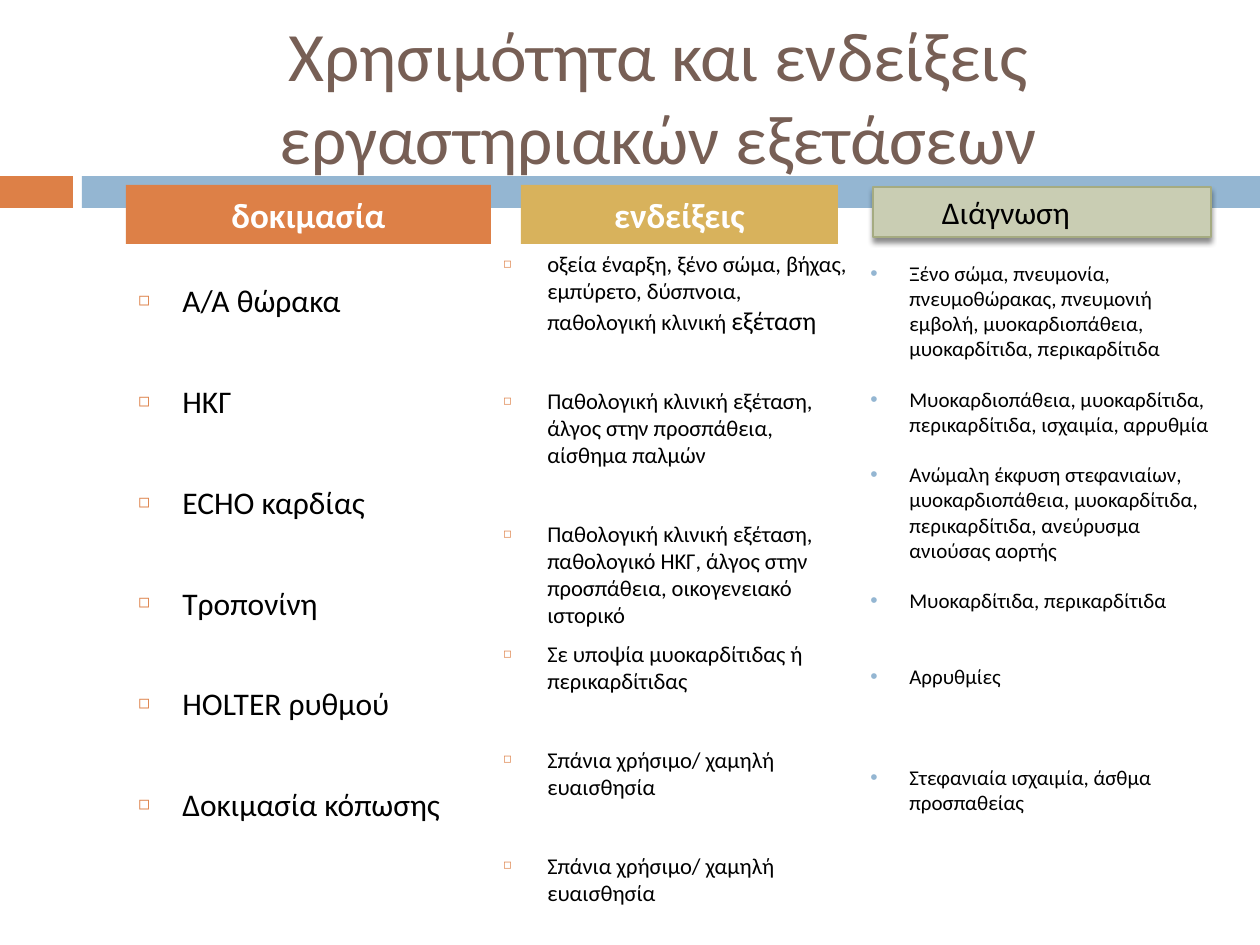
import copy

import lxml.etree
import pptx
import pptx.dml.color
import pptx.enum.shapes
import pptx.enum.text
import pptx.oxml
import pptx.oxml.ns
import pptx.util

EMU_PER_PX = 914400 / 126
ORANGE = "DD8047"
BLUE = "94B6D2"
GOLD = "D8B25C"
SAGE = "C9CDB3"
OLIVE = "A5AB81"
BROWN = "775F55"
BLACK = "000000"
WHITE = "FFFFFF"

TESTS = [
    (0, "Α/Α θώρακα"),
    (36, "HKΓ"),
    (36, "ECHO καρδίας"),
    (36, "Τροπονίνη"),
    (36, "HOLTER ρυθμού"),
    (36, "Δοκιμασία κόπωσης"),
]
INDICATIONS = [
    (0, "οξεία έναρξη, ξένο σώμα, βήχας, εμπύρετο, δύσπνοια,\vπαθολογική κλινική "),
    (29.5, "Παθολογική κλινική εξέταση, άλγος στην προσπάθεια, αίσθημα παλμών"),
    (29.5, "Παθολογική κλινική εξέταση, παθολογικό ΗΚΓ, άλγος στην προσπάθεια, οικογενειακό ιστορικό"),
    (6.7, "Σε υποψία μυοκαρδίτιδας ή περικαρδίτιδας"),
    (29.5, "Σπάνια χρήσιμο/ χαμηλή ευαισθησία"),
    (29.5, "Σπάνια χρήσιμο/ χαμηλή ευαισθησία"),
]
LINE = 14.4
DIAGNOSES = [
    (0, "Ξένο σώμα, πνευμονία, πνευμοθώρακας, πνευμονιή εμβολή, μυοκαρδιοπάθεια, μυοκαρδίτιδα, περικαρδίτιδα"),
    (LINE, "Μυοκαρδιοπάθεια, μυοκαρδίτιδα, περικαρδίτιδα, ισχαιμία, αρρυθμία"),
    (LINE, "Ανώμαλη έκφυση στεφανιαίων, μυοκαρδιοπάθεια, μυοκαρδίτιδα, περικαρδίτιδα, ανεύρυσμα ανιούσας αορτής"),
    (LINE, "Μυοκαρδίτιδα, περικαρδίτιδα"),
    (2 * LINE, "Αρρυθμίες"),
    (3 * LINE, "Στεφανιαία ισχαιμία, άσθμα προσπαθείας"),
]


def px(length):
    return pptx.util.Emu(round(length * EMU_PER_PX))


def color(value):
    return pptx.dml.color.RGBColor.from_string(value)


def add_child(parent, tag, **attributes):
    return lxml.etree.SubElement(parent, pptx.oxml.ns.qn(tag), attributes)


class SlideBuilder:
    font = "Calibri"

    def __init__(self, slide):
        self.slide = slide

    def format_run(self, run, size, hex_color, bold=False):
        run.font.name = self.font
        run.font.size = pptx.util.Pt(size)
        run.font.bold = bold
        run.font.color.rgb = color(hex_color)

    def title(self, text, left, top, width, height):
        shape = self.slide.shapes.title
        self.slide.shapes.element.append(shape.element)
        shape.left, shape.top = px(left), px(top)
        shape.width, shape.height = px(width), px(height)
        frame = shape.text_frame
        frame.text = text
        frame.auto_size = pptx.enum.text.MSO_AUTO_SIZE.NONE
        frame.vertical_anchor = pptx.enum.text.MSO_ANCHOR.MIDDLE
        frame.paragraphs[0].alignment = pptx.enum.text.PP_ALIGN.CENTER
        self.format_run(frame.paragraphs[0].runs[0], 39.6, BROWN)

    def rectangle(self, left, top, width, height, fill):
        shape = self.slide.shapes.add_shape(
            pptx.enum.shapes.MSO_SHAPE.RECTANGLE, px(left), px(top), px(width), px(height))
        shape.shadow.inherit = False
        shape.fill.solid()
        shape.fill.fore_color.rgb = color(fill)
        shape.line.fill.background()
        return shape

    def heading(self, text, left, top, width, height, fill, size=20, hex_color=WHITE, bold=True):
        shape = self.rectangle(left, top, width, height, fill)
        frame = shape.text_frame
        frame.text = text
        frame.word_wrap = True
        frame.vertical_anchor = pptx.enum.text.MSO_ANCHOR.MIDDLE
        frame.paragraphs[0].alignment = pptx.enum.text.PP_ALIGN.CENTER
        self.format_run(frame.paragraphs[0].runs[0], size, hex_color, bold)
        return shape

    def raised_heading(self, text, left, top, width, height):
        shape = self.heading(text, left, top, width, height, SAGE, 18, BLACK, False)
        shape.line.color.rgb = color(OLIVE)
        shape.line.width = pptx.util.Pt(0.79)
        shape.text_frame.margin_left = px(69)
        shape.text_frame.paragraphs[0].alignment = pptx.enum.text.PP_ALIGN.LEFT
        effects = shape.element.spPr.find(pptx.oxml.ns.qn("a:effectLst"))
        shadow = add_child(effects, "a:outerShdw", blurRad="38100", dist="30480",
                           dir="5400000", rotWithShape="0")
        shade = add_child(shadow, "a:srgbClr", val=BLACK)
        add_child(shade, "a:alpha", val="45000")

    def bullet_list(self, items, left, top, width, height, size, indent, bullet, bullet_color, scale=100):
        frame = self.slide.shapes.add_textbox(px(left), px(top), px(width), px(height)).text_frame
        frame.word_wrap = True
        for index, (gap, text) in enumerate(items):
            paragraph = frame.add_paragraph() if index else frame.paragraphs[0]
            paragraph.text = text
            paragraph.space_before = pptx.util.Pt(gap)
            for run in paragraph.runs:
                self.format_run(run, size, BLACK)
            for line_break in paragraph._p.findall(pptx.oxml.ns.qn("a:br")):
                line_break.append(copy.deepcopy(paragraph.runs[0].font._element))
            properties = paragraph._p.get_or_add_pPr()
            properties.set("marL", str(px(indent)))
            properties.set("indent", str(-px(indent)))
            add_child(add_child(properties, "a:buClr"), "a:srgbClr", val=bullet_color)
            add_child(properties, "a:buSzPct", val=str(scale * 1000))
            add_child(properties, "a:buFont", typeface="Arial")
            add_child(properties, "a:buChar", char=bullet)
        return frame


def main():
    presentation = pptx.Presentation()
    presentation.slide_width, presentation.slide_height = px(1260), px(945)
    builder = SlideBuilder(presentation.slides.add_slide(presentation.slide_layouts[5]))

    builder.rectangle(0, 176, 73, 32, ORANGE)
    builder.rectangle(82, 176, 1178, 32, BLUE)
    builder.title("Χρησιμότητα και ενδείξεις εργαστηριακών εξετάσεων", 123, 16, 1071, 158)

    builder.bullet_list(TESTS, 126, 275, 514, 571, 18, 44, "◻", ORANGE, 60)
    indications = builder.bullet_list(INDICATIONS, 491, 244, 377, 605, 12.9, 44, "◻", ORANGE, 60)
    emphasis = indications.paragraphs[0].add_run()
    emphasis.text = "εξέταση"
    builder.format_run(emphasis, 14.8, BLACK)

    builder.heading("δοκιμασία", 126, 185, 365, 59, ORANGE)
    builder.heading("ενδείξεις", 521, 185, 317, 59, GOLD)
    builder.bullet_list(DIAGNOSES, 858, 254, 367, 674, 12, 39, "•", BLUE)
    builder.raised_heading("Διάγνωση", 873, 187, 338, 50)

    presentation.save("out.pptx")


if __name__ == "__main__":
    main()
